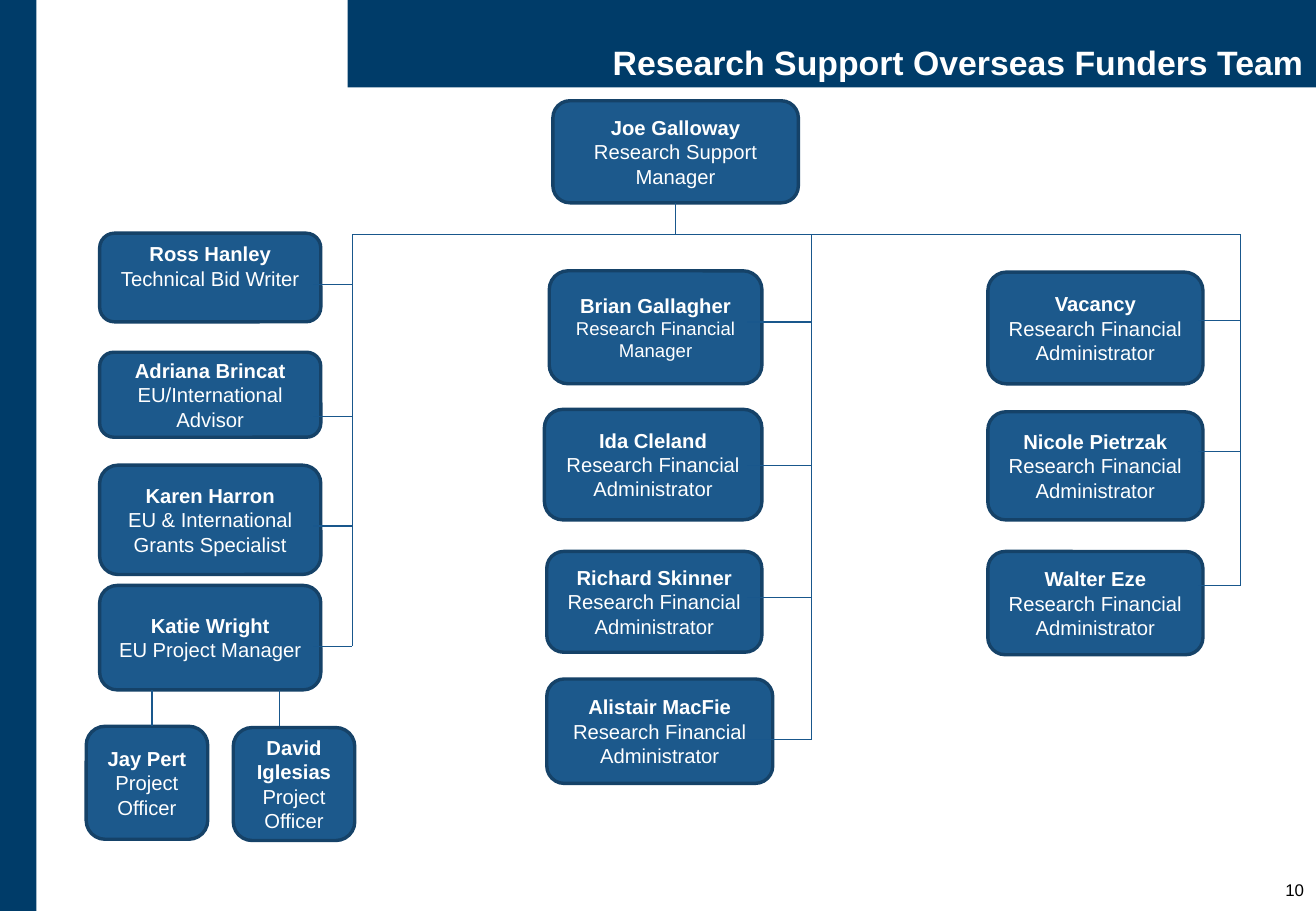
"""Builds the organisation chart slide of the Research Support Overseas Funders Team."""
from pptx import Presentation
from pptx.dml.color import RGBColor
from pptx.enum.shapes import MSO_CONNECTOR, MSO_SHAPE
from pptx.enum.text import MSO_ANCHOR, MSO_AUTO_SIZE, PP_ALIGN
from pptx.oxml.ns import qn
from pptx.util import Inches, Pt

NAVY = RGBColor(0x00, 0x3C, 0x69)
BOX_BLUE = RGBColor(0x1C, 0x59, 0x8C)
BORDER_BLUE = RGBColor(0x15, 0x42, 0x68)
LINE_BLUE = RGBColor(0x19, 0x57, 0x8C)
WHITE = RGBColor(0xFF, 0xFF, 0xFF)
BLACK = RGBColor(0x00, 0x00, 0x00)
STRAIGHT = MSO_CONNECTOR.STRAIGHT
RECTANGLE, ROUNDED = MSO_SHAPE.RECTANGLE, MSO_SHAPE.ROUNDED_RECTANGLE
MIDDLE, BOTTOM = MSO_ANCHOR.MIDDLE, MSO_ANCHOR.BOTTOM
CENTER, RIGHT = PP_ALIGN.CENTER, PP_ALIGN.RIGHT
NO_AUTOFIT = MSO_AUTO_SIZE.NONE

RAIL_TOP = 1.93
LEFT_RAIL, MIDDLE_RAIL, RIGHT_RAIL = 2.9, 6.68, 10.21
ADMINISTRATOR = "Research Financial Administrator"


def style_text(paragraph, text, size, color, align, bold=False):
    paragraph.text = text
    paragraph.alignment = align
    paragraph.font.name = "Arial"
    paragraph.font.size = Pt(size)
    paragraph.font.bold = bold
    paragraph.font.color.rgb = color


def add_line(x1, y1, x2, y2):
    line = slide.shapes.add_connector(STRAIGHT, Inches(x1), Inches(y1), Inches(x2), Inches(y2))
    line.line.color.rgb = LINE_BLUE
    line.line.width = Pt(0.75)
    properties = line._element.spPr
    properties.append(properties.makeelement(qn("a:effectLst"), {}))
    return line


prs = Presentation()
prs.slide_width, prs.slide_height = Inches(10.83), Inches(7.5)
slide = prs.slides.add_slide(prs.slide_layouts[5])

side_bar = slide.shapes.add_shape(RECTANGLE, 0, 0, Inches(0.3), prs.slide_height)
side_bar.shadow.inherit = False
side_bar.fill.solid()
side_bar.fill.fore_color.rgb = NAVY
side_bar.line.fill.background()

title = slide.shapes.title
title.left, title.top, title.width, title.height = Inches(2.86), 0, Inches(7.97), Inches(0.72)
title.fill.solid()
title.fill.fore_color.rgb = NAVY
heading = title.text_frame
heading.auto_size = NO_AUTOFIT
heading.vertical_anchor = BOTTOM
heading.margin_left, heading.margin_right = Inches(0.08), Inches(0.1)
heading.margin_top = heading.margin_bottom = Inches(0.04)
style_text(heading.paragraphs[0], "Research Support Overseas Funders Team", 20, WHITE, RIGHT, True)
heading.paragraphs[0].line_spacing = 0.9

page_number = slide.shapes.add_textbox(Inches(9.96), Inches(7.19), Inches(0.87), Inches(0.31))
page_number.text_frame.word_wrap = True
style_text(page_number.text_frame.paragraphs[0], "10", 10, BLACK, RIGHT)

people = [
    ("Joe Galloway", "Research Support Manager", 4.55, 0.83, 2.02, 0.84),
    ("Ross Hanley", "Technical Bid Writer", 0.82, 1.92, 1.82, 0.73),
    ("Adriana Brincat", "EU/International Advisor", 0.82, 2.9, 1.82, 0.7),
    ("Karen Harron", "EU & International Grants Specialist", 0.82, 3.83, 1.82, 0.9),
    ("Katie Wright", "EU Project Manager", 0.82, 4.82, 1.82, 0.86),
    ("Jay Pert", "Project Officer", 0.71, 5.98, 1, 0.93),
    ("David Iglesias", "Project Officer", 1.92, 5.99, 1, 0.93),
    ("Brian Gallagher", "Research Financial Manager", 4.52, 2.23, 1.75, 0.93),
    ("Ida Cleland", ADMINISTRATOR, 4.48, 3.37, 1.79, 0.91),
    ("Richard Skinner", ADMINISTRATOR, 4.5, 4.54, 1.77, 0.83),
    ("Alistair MacFie", ADMINISTRATOR, 4.5, 5.59, 1.86, 0.86),
    ("Vacancy", ADMINISTRATOR, 8.13, 2.24, 1.77, 0.92),
    ("Nicole Pietrzak", ADMINISTRATOR, 8.13, 3.39, 1.77, 0.89),
    ("Walter Eze", ADMINISTRATOR, 8.13, 4.54, 1.77, 0.85),
]
boxes = {}
for name, role, left, top, width, height in people:
    box = slide.shapes.add_shape(ROUNDED, Inches(left), Inches(top), Inches(width), Inches(height))
    box.shadow.inherit = False
    box.fill.solid()
    box.fill.fore_color.rgb = BOX_BLUE
    box.line.color.rgb = BORDER_BLUE
    box.line.width = Pt(2)
    box.text_frame.word_wrap = True
    box.text_frame.vertical_anchor = MIDDLE
    style_text(box.text_frame.paragraphs[0], name, 12, WHITE, CENTER, True)
    role_size = 11 if name == "Brian Gallagher" else 12
    style_text(box.text_frame.add_paragraph(), role, role_size, WHITE, CENTER)
    boxes[name] = box
boxes["Ross Hanley"].text_frame.margin_bottom = Inches(0.24)

manager_drop = add_line(5.56, 1.67, 5.56, RAIL_TOP)
manager_drop.begin_connect(boxes["Joe Galloway"], 2)
add_line(LEFT_RAIL, RAIL_TOP, RIGHT_RAIL, RAIL_TOP)

branches = [
    (LEFT_RAIL, 2.58, [2.34, 3.43, 4.33, 5.32]),
    (MIDDLE_RAIL, 6.15, [2.65, 3.83, 4.92, 6.09]),
    (RIGHT_RAIL, 9.86, [2.64, 3.72, 4.82]),
]
for rail, stub_start, stub_heights in branches:
    add_line(rail, RAIL_TOP, rail, stub_heights[-1])
    for y in stub_heights:
        add_line(stub_start, y, rail, y)

for x in (1.25, 2.3):
    add_line(x, 5.68, x, 5.98)

prs.save("out.pptx")
